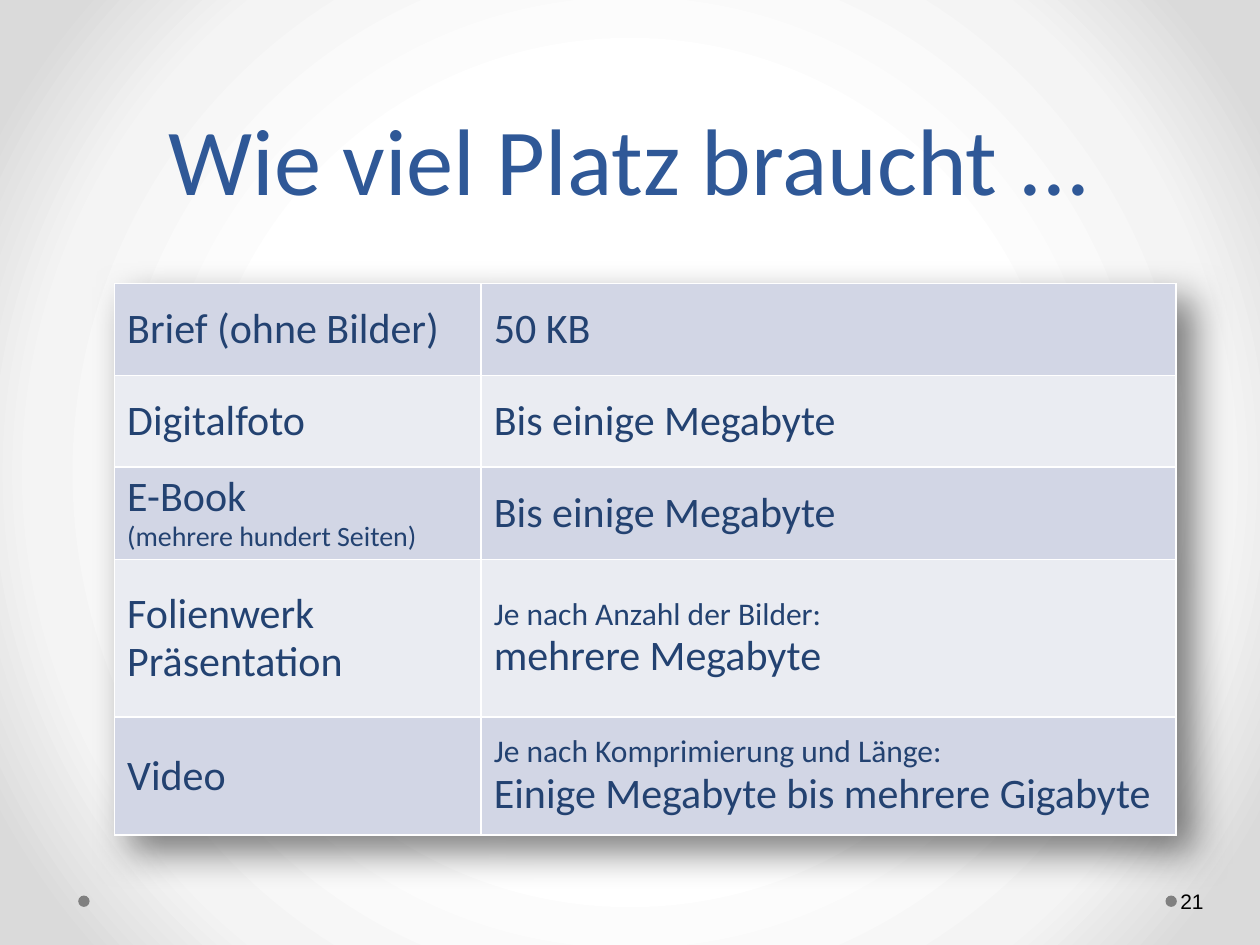
from dataclasses import dataclass

from pptx import Presentation
from pptx.dml.color import RGBColor
from pptx.enum.shapes import MSO_SHAPE
from pptx.enum.text import MSO_ANCHOR, PP_ALIGN
from pptx.oxml import parse_xml
from pptx.oxml.ns import nsdecls
from pptx.util import Pt

OVAL = MSO_SHAPE.OVAL
MIDDLE, BOTTOM = MSO_ANCHOR.MIDDLE, MSO_ANCHOR.BOTTOM
CENTER = PP_ALIGN.CENTER


@dataclass(frozen=True)
class Theme:
    font: str = "Calibri"
    num_font: str = "Arial"
    title: str = "2F5897"
    text: str = "234271"
    black: str = "000000"
    dot: str = "808080"
    line: str = "FFFFFF"
    bands: tuple = ("D2D6E5", "EAECF2")
    glow: tuple = ((50, "FFFFFF"), (76, "F4F4F4"), (92, "DADADA"))
    head: int = 54
    big: int = 24
    mid: int = 18
    small: int = 16
    num: int = 12


T = Theme()
COLS = (209.5, 397)
ROWS = (  # height, left cell, right cell; each cell is a list of lines
    (52.5, [("Brief (ohne Bilder)", T.big)], [("50 KB", T.big)]),
    (52.5, [("Digitalfoto", T.big)], [("Bis einige Megabyte", T.big)]),
    (52.5, [("E-Book", T.big), ("(mehrere hundert Seiten)", T.small)],
     [("Bis einige Megabyte", T.big)]),
    (90, [("Folienwerk Präsentation", T.big)],
     [("Je nach Anzahl der Bilder:", T.mid), ("mehrere Megabyte", T.big)]),
    (67.5, [("Video", T.big)],
     [("Je nach Komprimierung und Länge:", T.mid),
      ("Einige Megabyte bis mehrere Gigabyte", T.big)]),
)


def add_run(para, text, size, color, font=T.font):
    run = para.add_run()
    run.text = text
    run.font.size = Pt(size)
    run.font.name = font
    run.font.color.rgb = RGBColor.from_string(color)


def set_back(slide):
    """Fill the background with a round gradient, light in the middle."""
    stops = "".join(
        f'<a:gs pos="{pos * 1000}"><a:srgbClr val="{color}"/></a:gs>'
        for pos, color in T.glow)
    slide.background.fill.solid()
    props = slide.element.cSld.bg.bgPr
    props.replace(props[0], parse_xml(
        f'<a:gradFill {nsdecls("a")} rotWithShape="1"><a:gsLst>{stops}</a:gsLst>'
        '<a:path path="circle"><a:fillToRect l="50000" t="50000" r="50000" '
        'b="50000"/></a:path></a:gradFill>'))


def add_title(slide, text, left, top, width, height):
    shape = slide.shapes.title
    shape.left, shape.top = Pt(left), Pt(top)
    shape.width, shape.height = Pt(width), Pt(height)
    frame = shape.text_frame
    frame.vertical_anchor = BOTTOM
    para = frame.paragraphs[0]
    para.alignment = CENTER
    add_run(para, text, T.head, T.title)


def set_lines(cell):
    props = cell._tc.get_or_add_tcPr()
    for spot, side in enumerate("LRTB"):
        props.insert(spot, parse_xml(
            f'<a:ln{side} {nsdecls("a")} w="{Pt(1)}"><a:solidFill>'
            f'<a:srgbClr val="{T.line}"/></a:solidFill></a:ln{side}>'))


def fill_cell(cell, lines, color):
    cell.fill.solid()
    cell.fill.fore_color.rgb = RGBColor.from_string(color)
    cell.vertical_anchor = MIDDLE
    para = cell.text_frame.paragraphs[0]
    para.line_spacing = 0.93
    for spot, (text, size) in enumerate(lines):
        if spot:
            para.add_line_break()
        add_run(para, text, size, T.text)
    set_lines(cell)


def add_sizes(slide, left, top):
    """Place the table of file sizes, with a soft shadow."""
    high = sum(row[0] for row in ROWS)
    frame = slide.shapes.add_table(
        len(ROWS), len(COLS), Pt(left), Pt(top), Pt(sum(COLS)), Pt(high))
    table = frame.table
    table.first_row = False
    for col, width in zip(table.columns, COLS):
        col.width = Pt(width)
    for r, (height, *cells) in enumerate(ROWS):
        table.rows[r].height = Pt(height)
        for c, lines in enumerate(cells):
            fill_cell(table.cell(r, c), lines, T.bands[r % 2])
    table._tbl.tblPr.insert(0, parse_xml(
        f'<a:effectLst {nsdecls("a")}><a:outerShdw blurRad="{Pt(22)}" '
        f'dist="{Pt(13)}" dir="2700000" algn="tl" rotWithShape="0">'
        '<a:srgbClr val="000000"><a:alpha val="50000"/></a:srgbClr>'
        '</a:outerShdw></a:effectLst>'))


def add_foot(slide, number, left, top, width, height):
    """Place a dot at each end of the footer and the page number."""
    size, wide = 6.5, 44
    edge = left + width - wide
    for x in (left, edge - size):
        dot = slide.shapes.add_shape(
            OVAL, Pt(x), Pt(top + (height - size) / 2), Pt(size), Pt(size))
        dot.shadow.inherit = False
        dot.fill.solid()
        dot.fill.fore_color.rgb = RGBColor.from_string(T.dot)
        dot.line.fill.background()
    box = slide.shapes.add_textbox(Pt(edge), Pt(top), Pt(wide), Pt(height))
    frame = box.text_frame
    frame.word_wrap = True
    frame.vertical_anchor = MIDDLE
    frame.margin_left = Pt(2)
    frame.margin_right = Pt(3.6)
    add_run(frame.paragraphs[0], number, T.num, T.black, T.num_font)


def main():
    deck = Presentation()
    deck.slide_width, deck.slide_height = Pt(720), Pt(540)
    slide = deck.slides.add_slide(deck.slide_layouts[5])
    set_back(slide)
    add_title(slide, "Wie viel Platz braucht ...", 36, 0, 648, 126)
    add_sizes(slide, 65.5, 162)
    add_foot(slide, "21", 44.7, 500.5, 671.8, 29)
    deck.save("out.pptx")


if __name__ == "__main__":
    main()
